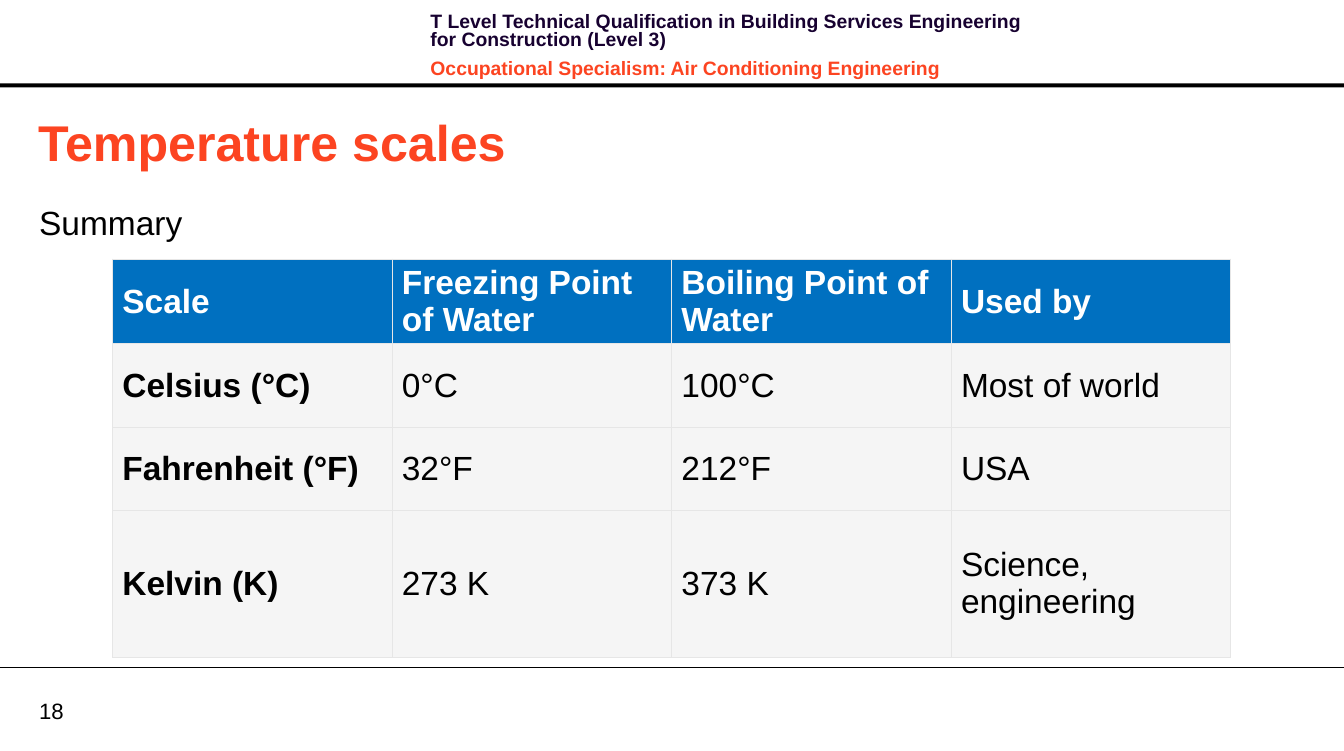
import dataclasses
import lxml.etree
import pptx
import pptx.dml.color
import pptx.enum.shapes
import pptx.enum.text
import pptx.oxml.ns
import pptx.util

Pt = pptx.util.Pt
qn = pptx.oxml.ns.qn
ANCHOR = pptx.enum.text.MSO_ANCHOR


def rgb(code):
    return pptx.dml.color.RGBColor.from_string(code)


@dataclasses.dataclass(frozen=True)
class Theme:
    font: str = "Arial"
    ink: str = "000000"
    navy: str = "170130"
    coral: str = "FC4421"
    blue: str = "0070C0"
    white: str = "FFFFFF"
    pale: str = "F5F5F5"
    edge: str = "E6E6E6"
    large: float = 36
    main: float = 24
    page: float = 15.9
    small: float = 13.9


def write(par, text, size, color, font, bold=False, lead=None, before=0, after=0):
    props = par._p.get_or_add_pPr()
    props.set("marL", "0")
    props.set("indent", "0")
    lxml.etree.SubElement(props, qn("a:buNone"))
    par.alignment = pptx.enum.text.PP_ALIGN.LEFT
    par.space_before, par.space_after = Pt(before), Pt(after)
    if lead:
        par.line_spacing = lead
    run = par.add_run()
    run.text = text
    run.font.name, run.font.size, run.font.bold = font, Pt(size), bold
    run.font.color.rgb = rgb(color)


class Page:
    def __init__(self, deck, theme):
        self.deck, self.theme = deck, theme
        self.slide = deck.slides.add_slide(deck.slide_layouts[1])
        self.shapes = self.slide.shapes

    def wide(self, share):
        return round(self.deck.slide_width * share / 100)

    def high(self, share):
        return round(self.deck.slide_height * share / 100)

    def area(self, x, y, w, h):
        return self.wide(x), self.high(y), self.wide(w), self.high(h)

    def fill(self, shape, area, lines, inset=True, anchor=ANCHOR.TOP):
        shape.left, shape.top, shape.width, shape.height = self.area(*area)
        frame = shape.text_frame
        frame.word_wrap = True
        frame.auto_size = pptx.enum.text.MSO_AUTO_SIZE.NONE
        frame.vertical_anchor = anchor
        frame.margin_left = frame.margin_right = Pt(7.2 if inset else 0)
        frame.margin_top = frame.margin_bottom = Pt(3.6 if inset else 0)
        for i, (text, style) in enumerate(lines):
            par = frame.add_paragraph() if i else frame.paragraphs[0]
            write(par, text, font=self.theme.font, **style)

    def title(self, text, area):
        style = dict(size=self.theme.large, color=self.theme.coral, bold=True)
        self.fill(self.shapes.title, area, [(text, style)])

    def body(self, text, area):
        style = dict(size=self.theme.main, color=self.theme.ink, lead=1.1, after=12)
        self.fill(self.slide.placeholders[1], area, [(text, style)], inset=False)

    def label(self, area, lines, **frame):
        self.fill(self.shapes.add_textbox(0, 0, 0, 0), area, lines, **frame)

    def bar(self, area):
        kind = pptx.enum.shapes.MSO_SHAPE.RECTANGLE
        shape = self.shapes.add_shape(kind, *self.area(*area))
        shape.shadow.inherit = False
        shape.fill.solid()
        shape.fill.fore_color.rgb = rgb(self.theme.ink)
        shape.line.fill.background()

    def rule(self, y):
        kind = pptx.enum.shapes.MSO_CONNECTOR.STRAIGHT
        top = self.high(y)
        line = self.shapes.add_connector(kind, 0, top, self.wide(100), top)
        line.line.color.rgb = rgb(self.theme.ink)
        line.line.width = Pt(0.75)
        lxml.etree.SubElement(line._element.spPr, qn("a:effectLst"))

    def border(self, cell):
        props = cell._tc.get_or_add_tcPr()
        for side in "LRTB":
            line = lxml.etree.SubElement(props, qn(f"a:ln{side}"), w=str(Pt(0.5)))
            paint = lxml.etree.SubElement(line, qn("a:solidFill"))
            lxml.etree.SubElement(paint, qn("a:srgbClr"), val=self.theme.edge)

    def table(self, x, y, width, highs, rows):
        theme, count = self.theme, len(rows[0])
        area = self.area(x, y, width, sum(highs))
        grid = self.shapes.add_table(len(rows), count, *area).table
        grid.horz_banding = False
        for col in grid.columns:
            col.width = self.wide(width / count)
        for r, (row, share) in enumerate(zip(rows, highs)):
            grid.rows[r].height = self.high(share)
            for c, text in enumerate(row):
                cell = grid.cell(r, c)
                self.border(cell)
                cell.fill.solid()
                cell.fill.fore_color.rgb = rgb(theme.pale if r else theme.blue)
                cell.vertical_anchor = ANCHOR.MIDDLE
                write(cell.text_frame.paragraphs[0], text, size=theme.main,
                      color=theme.ink if r else theme.white,
                      font=theme.font, bold=r == 0 or c == 0)


def main():
    deck = pptx.Presentation()
    deck.slide_width = pptx.util.Inches(13.39)
    deck.slide_height = pptx.util.Inches(7.48)
    theme = Theme()
    page = Page(deck, theme)

    page.bar((0, 11.1, 100, 0.53))
    page.rule(88.9)
    head = dict(size=theme.small, bold=True, lead=Pt(13), after=4)
    page.label((31.29, 1.2, 47.2, 8.56), [
        ("T Level Technical Qualification in Building Services Engineering "
         "for Construction (Level 3)", dict(head, color=theme.navy)),
        ("Occupational Specialism: Air Conditioning Engineering",
         dict(head, color=theme.coral, before=4)),
    ])
    page.label((2.91, 92.78, 4.78, 3.61),
               [("18", dict(size=theme.page, color=theme.ink))],
               inset=False, anchor=ANCHOR.MIDDLE)

    page.title("Temperature scales", (2.09, 14.17, 85.66, 9.49))
    page.body("Summary", (2.91, 26.34, 95.22, 37.3))
    page.table(8.36, 34.49, 83.2, [10.96, 11.1, 11.1, 19.52], [
        ["Scale", "Freezing Point of Water", "Boiling Point of Water", "Used by"],
        ["Celsius (°C)", "0°C", "100°C", "Most of world"],
        ["Fahrenheit (°F)", "32°F", "212°F", "USA"],
        ["Kelvin (K)", "273 K", "373 K", "Science, engineering"],
    ])
    deck.save("out.pptx")


if __name__ == "__main__":
    main()
